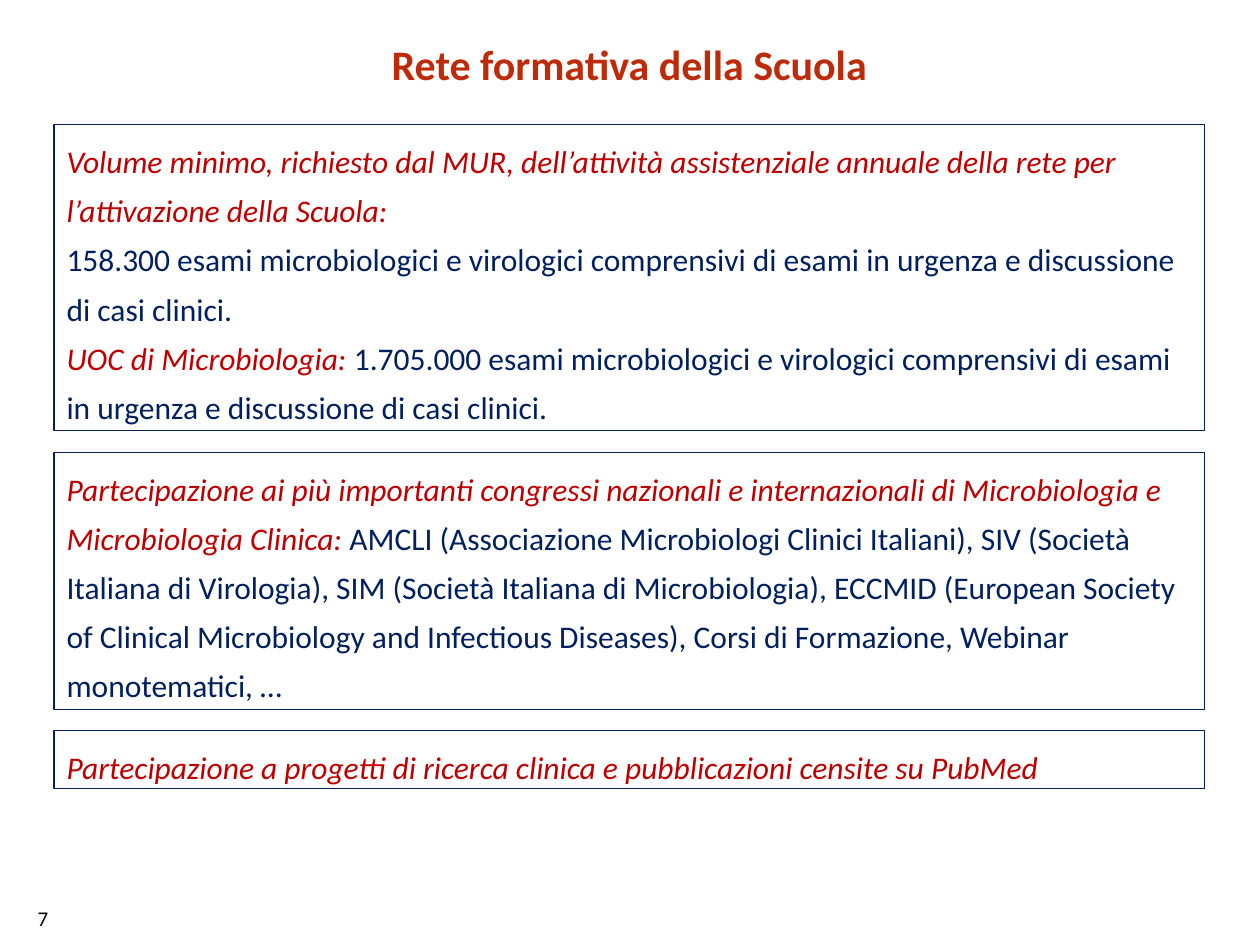
from dataclasses import dataclass

import pptx
import pptx.dml.color
import pptx.enum.shapes
import pptx.enum.text
import pptx.util
from pptx.util import Inches


@dataclass(frozen=True)
class Theme:
    """Hold the colours, font and type sizes of the slide."""
    font: str = "Calibri"
    title: str = "BD2B0B"
    heading: str = "C00000"
    body: str = "002060"
    number: str = "000000"
    title_size: int = 24
    body_size: int = 18
    number_size: int = 12


THEME = Theme()
PANEL_LEFT, PANEL_WIDTH = 0.43, 9.13
PANEL_TOP, PANEL_GAP = 0.99, 0.17

PANELS = [
    (2.43, [
        [("heading", "Volume minimo, richiesto dal MUR, dell’attività assistenziale annuale "
                     "della rete per l’attivazione della Scuola:")],
        [("body", "158.300 esami microbiologici e virologici comprensivi di esami in urgenza "
                  "e discussione di casi clinici.")],
        [("heading", "UOC di Microbiologia: "),
         ("body", "1.705.000 esami microbiologici e virologici comprensivi di esami in urgenza "
                  "e discussione di casi clinici.")],
    ]),
    (2.04, [
        [("heading", "Partecipazione ai più importanti congressi nazionali e internazionali "
                     "di Microbiologia e Microbiologia Clinica: "),
         ("body", "AMCLI (Associazione Microbiologi Clinici Italiani), SIV (Società Italiana "
                  "di Virologia), SIM (Società Italiana di Microbiologia), ECCMID (European "
                  "Society of Clinical Microbiology and Infectious Diseases), Corsi di "
                  "Formazione, Webinar monotematici, …")],
    ]),
    (0.46, [
        [("heading", "Partecipazione a progetti di ricerca clinica e pubblicazioni censite "
                     "su PubMed")],
    ]),
]


def add_run(paragraph, text, size, color, bold=False, italic=False):
    """Append a styled run to a paragraph."""
    run = paragraph.add_run()
    run.text = text
    run.font.name = THEME.font
    run.font.size = pptx.util.Pt(size)
    run.font.color.rgb = pptx.dml.color.RGBColor.from_string(color)
    run.font.bold = bold
    run.font.italic = italic


def add_label(slide, box, text, size, color, bold=False):
    """Add a one-line text box and return its paragraph."""
    shape = slide.shapes.add_textbox(*map(Inches, box))
    shape.text_frame.word_wrap = True
    paragraph = shape.text_frame.paragraphs[0]
    add_run(paragraph, text, size, color, bold=bold)
    return paragraph


def add_panel(slide, top, height, paragraphs):
    """Add an outlined rectangle holding headings and body text."""
    shape = slide.shapes.add_shape(
        pptx.enum.shapes.MSO_SHAPE.RECTANGLE,
        Inches(PANEL_LEFT), Inches(top), Inches(PANEL_WIDTH), Inches(height))
    shape.shadow.inherit = False
    shape.fill.background()
    shape.line.color.rgb = pptx.dml.color.RGBColor.from_string(THEME.body)
    shape.line.width = pptx.util.Pt(0.75)
    frame = shape.text_frame
    frame.word_wrap = True
    frame.auto_size = pptx.enum.text.MSO_AUTO_SIZE.SHAPE_TO_FIT_TEXT
    frame.vertical_anchor = pptx.enum.text.MSO_ANCHOR.TOP
    for index, runs in enumerate(paragraphs):
        paragraph = frame.add_paragraph() if index else frame.paragraphs[0]
        paragraph.alignment = pptx.enum.text.PP_ALIGN.LEFT
        paragraph.line_spacing = 1.3
        for role, text in runs:
            add_run(paragraph, text, THEME.body_size, getattr(THEME, role),
                    italic=role == "heading")


def main():
    """Build and save the slide."""
    presentation = pptx.Presentation()
    presentation.slide_width = Inches(10)
    presentation.slide_height = Inches(7.5)
    slide = presentation.slides.add_slide(presentation.slide_layouts[6])

    add_label(slide, (0.2, 7.14, 0.87, 0.3), "7", THEME.number_size, THEME.number)
    title = add_label(slide, (0.39, 0.35, 9.21, 0.48), "Rete formativa della Scuola",
                      THEME.title_size, THEME.title, bold=True)
    title.alignment = pptx.enum.text.PP_ALIGN.CENTER
    title.line_spacing = pptx.util.Pt(22)

    top = PANEL_TOP
    for height, paragraphs in PANELS:
        add_panel(slide, top, height, paragraphs)
        top += height + PANEL_GAP

    presentation.save("out.pptx")


if __name__ == "__main__":
    main()
